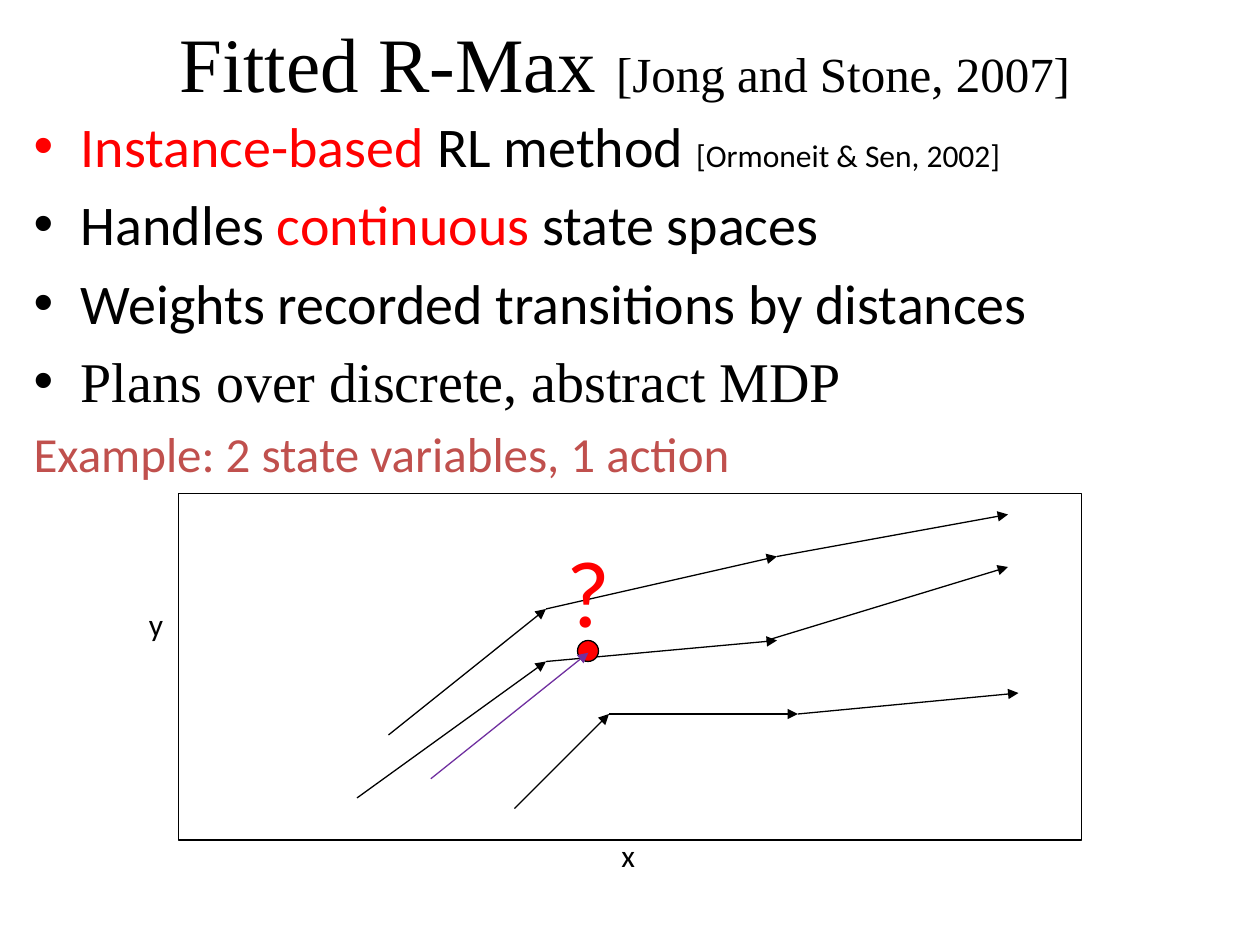
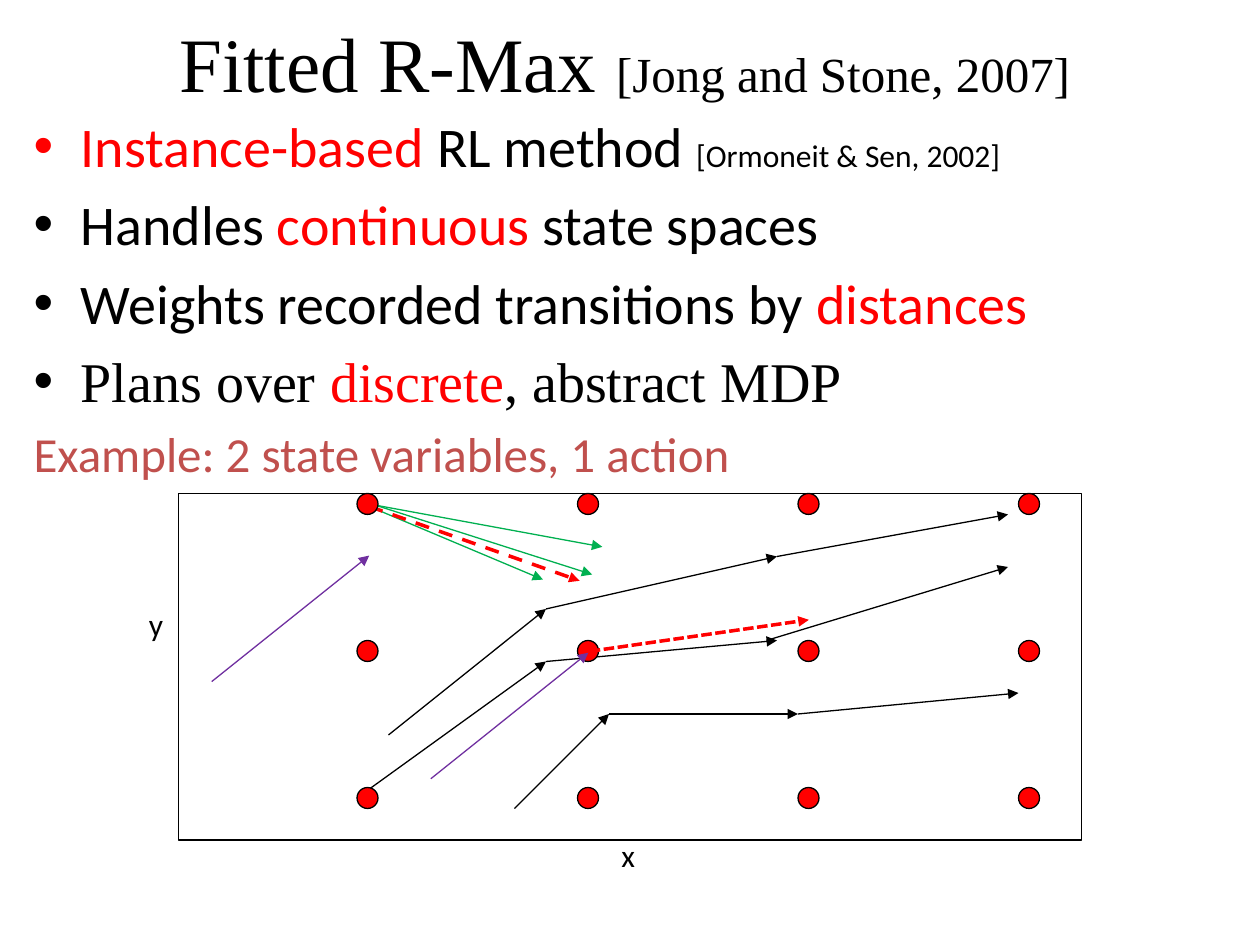
from itertools import pairwise, product

from lxml import etree
from pptx import Presentation
from pptx.dml.color import RGBColor
from pptx.enum.dml import MSO_LINE_DASH_STYLE as Dash
from pptx.enum.shapes import MSO_CONNECTOR as Connector, MSO_SHAPE as Shape
from pptx.enum.text import MSO_ANCHOR as Anchor, MSO_AUTO_SIZE as AutoSize, PP_ALIGN as Align
from pptx.oxml.ns import qn
from pptx.util import Pt

BLACK, WHITE, RED = "000000", "FFFFFF", "FF0000"
PURPLE, GREEN, BRICK = "7030A0", "00B050", "C0504D"
SANS, SERIF = "Calibri", "Times New Roman"

TITLE_BOX = (12, 0, 690, 90)
BODY_BOX = (12, 60, 702, 186)
PLOT_BOX = (102, 282, 516, 198)

# Points below are relative to the plot's top left corner.
TRAJECTORIES = [
    [(120, 138), (210, 66), (342, 36), (474, 12)],
    [(102, 174), (210, 96), (342, 84)],
    [(336, 84), (474, 42)],
    [(192, 180), (246, 126), (354, 126), (480, 114)],
]
STATE_SIZE = 12
STATE_GRID = [(102 + 126 * col, 84 * row) for col, row in product(range(4), range(3))]
QUERY_STATE = (228, 84)
QUERY_ARROW = ((144.2, 163), (234.2, 91))
CORNER_ARROW = ((19, 107.5), (109, 35.5))
CORNER_NEIGHBOURS = [
    ((109, 6), (242.2, 30.5)),
    ((110.4, 6), (236.4, 46.3)),
    ((109, 7.4), (208.3, 49.2)),
]
CORNER_PREDICTION = ((109, 7.4), (229.2, 49.9))
QUERY_PREDICTION = ((235, 90.2), (360.2, 72.2))


def color(hex_value):
    return RGBColor.from_string(hex_value)


def set_all(target, values):
    for name, value in values.items():
        setattr(target, name, value)


def place(shape, box):
    set_all(shape, dict(zip(("left", "top", "width", "height"), map(Pt, box))))


def write(paragraph, text, size, hue=BLACK, font=SANS):
    run = paragraph.add_run()
    run.text = text
    set_all(run.font, {"size": Pt(size), "name": font})
    run.font.color.rgb = color(hue)


def add_title(slide, box):
    title = slide.shapes.title
    place(title, box)
    title.fill.solid()
    title.fill.fore_color.rgb = color(WHITE)
    set_all(title.text_frame, {"vertical_anchor": Anchor.TOP, "margin_top": Pt(8.8),
                               "auto_size": AutoSize.NONE})
    heading = title.text_frame.paragraphs[0]
    heading.alignment = Align.CENTER
    write(heading, "Fitted R-Max ", 44, font=SERIF)
    write(heading, "[Jong and Stone, 2007]", 28, font=SERIF)


def add_points(slide, box, emphasis):
    """List the method's properties; emphasis colours the later keywords."""
    body = slide.placeholders[1]
    place(body, box)
    frame = body.text_frame
    frame.auto_size = AutoSize.NONE
    points = [
        [("Instance-based", 32, RED), (" RL method ", 32), ("[Ormoneit & Sen, 2002]", 18)],
        [("Handles ", 32), ("continuous", 32, RED), (" state spaces", 32)],
        [("Weights recorded transitions by ", 32), ("distances", 32, emphasis)],
        [("Plans over ", 32, BLACK, SERIF), ("discrete", 32, emphasis, SERIF),
         (", abstract MDP", 32, BLACK, SERIF)],
        [("Example: 2 state variables, 1 action", 28, BRICK)],
    ]
    for index, runs in enumerate(points):
        point = frame.paragraphs[0] if index == 0 else frame.add_paragraph()
        for run in runs:
            write(point, *run)
    etree.SubElement(point._p.get_or_add_pPr(), qn("a:buNone"))


class Plot:
    """State space diagram whose parts are placed relative to its box."""

    def __init__(self, slide, box):
        self.shapes = slide.shapes
        self.left, self.top, width, height = box
        self.add_outlined(Shape.RECTANGLE, (0, 0), width, height)
        self.add_label("x", (246, 192), (27, 36))
        self.add_label("y", (-24, 60), (27, 36))
        for trajectory in TRAJECTORIES:
            for step in pairwise(trajectory):
                self.add_arrow(step)

    def add_outlined(self, kind, corner, width, height, fill=None):
        x, y = corner
        outlined = self.shapes.add_shape(
            kind, *map(Pt, (self.left + x, self.top + y, width, height)))
        outlined.shadow.inherit = False
        if fill:
            outlined.fill.solid()
            outlined.fill.fore_color.rgb = color(fill)
        else:
            outlined.fill.background()
        outlined.line.color.rgb = color(BLACK)
        outlined.line.width = Pt(0.75)

    def add_state(self, corner):
        self.add_outlined(Shape.OVAL, corner, STATE_SIZE, STATE_SIZE, RED)

    def add_label(self, text, corner, size, points=18, hue=BLACK):
        x, y = corner
        label = self.shapes.add_textbox(*map(Pt, (self.left + x, self.top + y, *size)))
        set_all(label.text_frame, {"word_wrap": False, "auto_size": AutoSize.SHAPE_TO_FIT_TEXT})
        write(label.text_frame.paragraphs[0], text, points, hue)

    def add_arrow(self, ends, hue=BLACK, width=0.75, dash=None):
        (x1, y1), (x2, y2) = ends
        arrow = self.shapes.add_connector(
            Connector.STRAIGHT,
            Pt(self.left + x1), Pt(self.top + y1), Pt(self.left + x2), Pt(self.top + y2))
        arrow.line.color.rgb = color(hue)
        set_all(arrow.line, {"width": Pt(width), "dash_style": dash})
        etree.SubElement(arrow.line._get_or_add_ln(), qn("a:tailEnd"), type="triangle")
        etree.SubElement(arrow._element.spPr, qn("a:effectLst"))


def add_method_slide(deck, emphasis):
    slide = deck.slides.add_slide(deck.slide_layouts[1])
    add_title(slide, TITLE_BOX)
    add_points(slide, BODY_BOX, emphasis)
    return Plot(slide, PLOT_BOX)


def add_query_slide(deck):
    plot = add_method_slide(deck, BLACK)
    plot.add_state(QUERY_STATE)
    plot.add_label("?", (214.8, 19), (39, 72.7), 54, RED)
    plot.add_arrow(QUERY_ARROW, PURPLE)


def add_prediction_slide(deck):
    plot = add_method_slide(deck, RED)
    for neighbour in CORNER_NEIGHBOURS:
        plot.add_arrow(neighbour, GREEN)
    plot.add_arrow(CORNER_PREDICTION, RED, 2, Dash.DASH)
    for corner in STATE_GRID:
        plot.add_state(corner)
    plot.add_arrow(QUERY_PREDICTION, RED, 2, Dash.SQUARE_DOT)
    for arrow in (QUERY_ARROW, CORNER_ARROW):
        plot.add_arrow(arrow, PURPLE)


def main():
    deck = Presentation()
    set_all(deck, {"slide_width": Pt(720), "slide_height": Pt(540)})
    add_query_slide(deck)
    add_prediction_slide(deck)
    deck.save("out.pptx")


if __name__ == "__main__":
    main()
